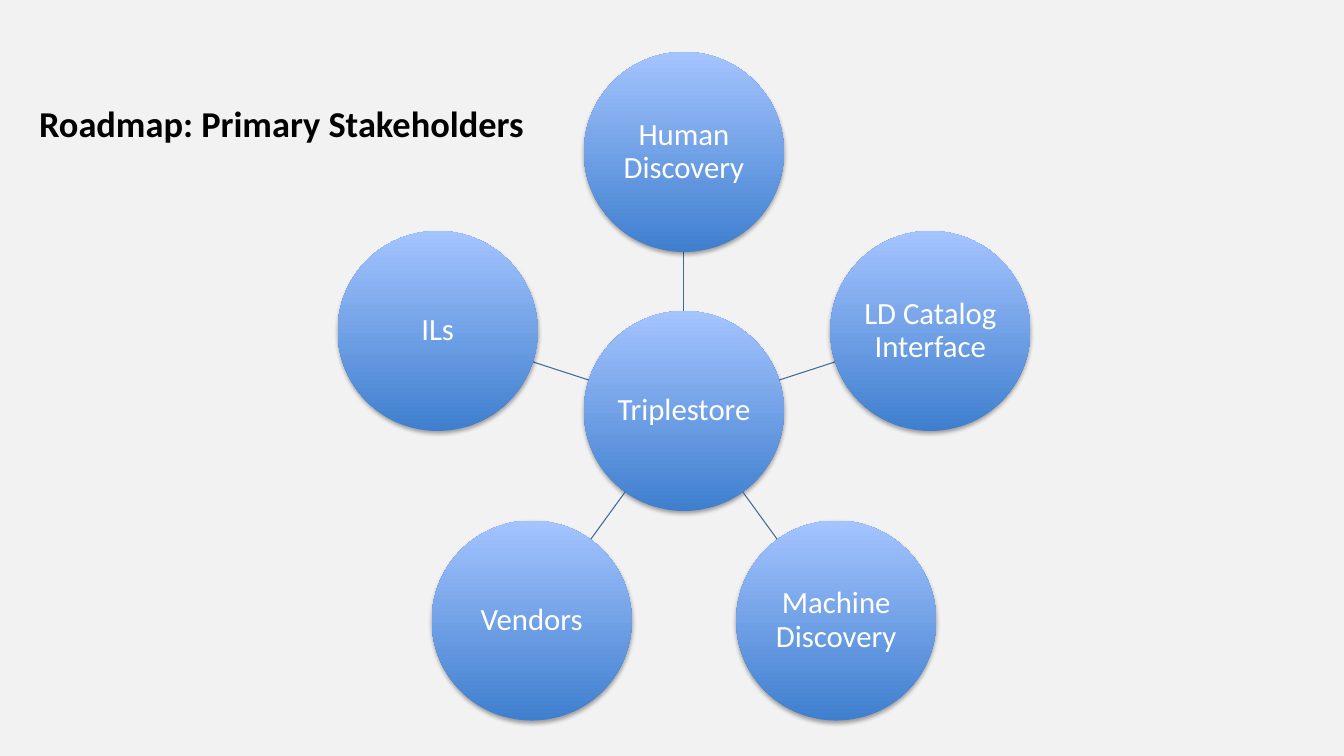
import math

import lxml.etree
import pptx
import pptx.dml.color
import pptx.enum.shapes
import pptx.enum.text
import pptx.oxml
import pptx.oxml.ns
import pptx.util

COLOURS = {
    "background": "F2F2F2",
    "title": "000000",
    "label": "FFFFFF",
    "spoke": "3F6797",
    "disc_bottom": "3F7FCE",
    "disc_top": "A4C4FF",
}
STAKEHOLDERS = ["Human Discovery", "LD Catalog Interface", "Machine Discovery", "Vendors", "ILs"]
HUB_X, HUB_Y = 684, 411
RADIUS = 100
ORBIT = 259
SHADOW = (
    '<a:effectLst %s><a:outerShdw blurRad="40000" dist="23000" dir="5400000" rotWithShape="0">'
    '<a:srgbClr val="000000"><a:alpha val="35000"/></a:srgbClr></a:outerShdw></a:effectLst>'
    % pptx.oxml.ns.nsdecls("a")
)


class Page:
    font = "Calibri"
    scale = 914400 / 100.8

    def __init__(self, deck):
        deck.slide_width = self.px(1344)
        deck.slide_height = self.px(756)
        self.slide = deck.slides.add_slide(deck.slide_layouts[5])
        fill = self.slide.background.fill
        fill.solid()
        fill.fore_color.rgb = self.colour("background")

    def px(self, length):
        return pptx.util.Emu(round(length * self.scale))

    def colour(self, name):
        return pptx.dml.color.RGBColor.from_string(COLOURS[name])

    def set_text(self, box, text, size, colour, align, bold=False):
        frame = box.text_frame
        frame.text = text
        frame.word_wrap = True
        frame.auto_size = pptx.enum.text.MSO_AUTO_SIZE.NONE
        frame.vertical_anchor = pptx.enum.text.MSO_ANCHOR.MIDDLE
        para = frame.paragraphs[0]
        para.alignment = align
        for span in para.runs:
            span.font.name = self.font
            span.font.size = pptx.util.Pt(size)
            span.font.bold = bold
            span.font.color.rgb = self.colour(colour)
        return frame

    def title(self, text, left, top, width, height):
        box = self.slide.shapes.title
        box.left, box.top = self.px(left), self.px(top)
        box.width, box.height = self.px(width), self.px(height)
        self.set_text(box, text, 26, "title", pptx.enum.text.PP_ALIGN.LEFT, bold=True)

    def disc(self, text, x, y):
        disc = self.slide.shapes.add_shape(
            pptx.enum.shapes.MSO_SHAPE.OVAL,
            self.px(x - RADIUS), self.px(y - RADIUS),
            self.px(2 * RADIUS), self.px(2 * RADIUS),
        )
        disc.fill.gradient()
        disc.fill.gradient_angle = 90
        for stop, name in zip(disc.fill.gradient_stops, ("disc_bottom", "disc_top")):
            stop.color.rgb = self.colour(name)
        disc.line.fill.background()
        disc._element.spPr.append(pptx.oxml.parse_xml(SHADOW))
        frame = self.set_text(disc, text, 22, "label", pptx.enum.text.PP_ALIGN.CENTER)
        frame.paragraphs[0].line_spacing = 0.9
        frame.margin_left = frame.margin_right = self.px(2)
        frame.margin_top = frame.margin_bottom = self.px(2)

    def spoke(self, start, end):
        line = self.slide.shapes.add_connector(
            pptx.enum.shapes.MSO_CONNECTOR.STRAIGHT,
            *(self.px(length) for length in start + end),
        )
        line.line.color.rgb = self.colour("spoke")
        line.line.width = pptx.util.Pt(0.75)
        lxml.etree.SubElement(line._element.spPr, pptx.oxml.ns.qn("a:effectLst"))


def around_hub(index, distance):
    angle = 2 * math.pi * index / len(STAKEHOLDERS)
    return HUB_X + distance * math.sin(angle), HUB_Y - distance * math.cos(angle)


def main():
    deck = pptx.Presentation()
    page = Page(deck)
    page.title("Roadmap: Primary Stakeholders", 29, 95, 516, 56)
    page.disc("Triplestore", HUB_X, HUB_Y)
    for index, name in enumerate(STAKEHOLDERS):
        page.spoke(around_hub(index, RADIUS), around_hub(index, ORBIT - RADIUS))
        page.disc(name, *around_hub(index, ORBIT))
    deck.save("out.pptx")


if __name__ == "__main__":
    main()
